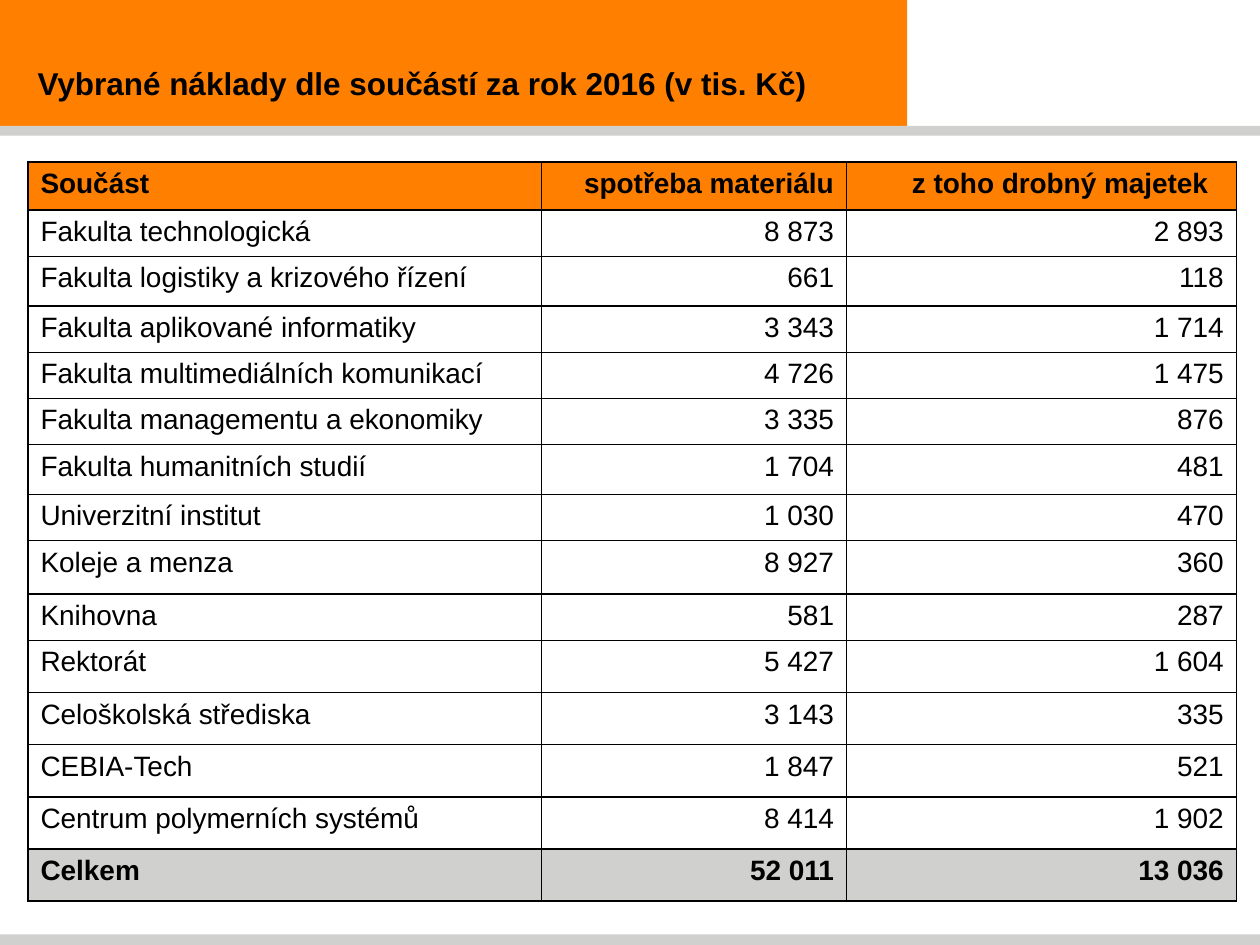
from typing import NamedTuple

from lxml.etree import SubElement as Sub
from pptx import Presentation
from pptx.dml.color import RGBColor as RGB
from pptx.enum.shapes import MSO_SHAPE as Shape
from pptx.enum.text import MSO_ANCHOR as Anchor, PP_ALIGN as Align
from pptx.oxml.ns import qn
from pptx.util import Pt

HUES = {"orange": "FF8001", "gray": "D0D0CE", "black": "000000"}
FACE = "Arial"


class Band(NamedTuple):
    left: float
    top: float
    width: float
    height: float
    hue: str


class Row(NamedTuple):
    name: str
    cost: str
    part: str
    height: float
    hue: str = ""


BANDS = [
    Band(0, 0, 518.4, 72, "orange"),
    Band(0, 534, 720, 6, "gray"),
    Band(0, 72, 720, 5.5, "gray"),
]
COLS = [293.5, 174.3, 222.7]
ROWS = [
    Row("Součást", "spotřeba materiálu", "z toho drobný majetek", 27.4, "orange"),
    Row("Fakulta technologická", "8 873", "2 893", 25),
    Row("Fakulta logistiky a krizového řízení", "661", "118", 28.4),
    Row("Fakulta aplikované informatiky", "3 343", "1 714", 25),
    Row("Fakulta multimediálních komunikací", "4 726", "1 475", 25),
    Row("Fakulta managementu a ekonomiky", "3 335", "876", 25),
    Row("Fakulta humanitních studií", "1 704", "481", 28.4),
    Row("Univerzitní institut", "1 030", "470", 26.3),
    Row("Koleje a menza", "8 927", "360", 30.6),
    Row("Knihovna", "581", "287", 25),
    Row("Rektorát", "5 427", "1 604", 29.8),
    Row("Celoškolská střediska", "3 143", "335", 29.8),
    Row("CEBIA-Tech", "1 847", "521", 29.8),
    Row("Centrum polymerních systémů", "8 414", "1 902", 29.8),
    Row("Celkem", "52 011", "13 036", 29.8, "gray"),
]


def tint(hue: str) -> RGB:
    return RGB.from_string(HUES[hue])


def style(para, size: float, bold: bool, left: float, first: float = 0) -> None:
    props = para._p.get_or_add_pPr()
    props.set("marL", str(Pt(left)))
    props.set("indent", str(Pt(first)))
    font = para.font
    font.name, font.size, font.bold = FACE, Pt(size), bold
    font.color.rgb = tint("black")


def draw_band(slide, band: Band) -> None:
    box = slide.shapes.add_shape(Shape.RECTANGLE, *map(Pt, band[:4]))
    box.shadow.inherit = False
    box.fill.solid()
    box.fill.fore_color.rgb = tint(band.hue)
    box.line.fill.background()


def draw_title(slide, text: str) -> None:
    box = slide.shapes.add_textbox(Pt(0), Pt(23), Pt(518.4), Pt(49))
    frame = box.text_frame
    frame.word_wrap = True
    frame.vertical_anchor = Anchor.MIDDLE
    para = frame.paragraphs[0]
    para.text = text
    style(para, 18, True, 14.4)


def add_rules(cell) -> None:
    props = cell._tc.get_or_add_tcPr()
    for side in ("lnL", "lnR", "lnT", "lnB"):
        line = Sub(props, qn(f"a:{side}"), w=str(Pt(1)))
        fill = Sub(line, qn("a:solidFill"))
        Sub(fill, qn("a:srgbClr"), val=HUES["black"])


def fill_cell(cell, text: str, hue: str, right: bool) -> None:
    add_rules(cell)
    if hue:
        cell.fill.solid()
        cell.fill.fore_color.rgb = tint(hue)
    else:
        cell.fill.background()
    para = cell.text_frame.paragraphs[0]
    para.text = text
    para.alignment = Align.RIGHT if right else Align.LEFT
    style(para, 16, bool(hue), 27.4, -27.4)


def draw_table(slide) -> None:
    high = sum(row.height for row in ROWS)
    frame = slide.shapes.add_table(
        len(ROWS), len(COLS), Pt(16), Pt(92.7), Pt(sum(COLS)), Pt(high)
    )
    table = frame.table
    table.first_row = table.horz_banding = False
    for col, width in zip(table.columns, COLS):
        col.width = Pt(width)
    for r, row in enumerate(ROWS):
        table.rows[r].height = Pt(row.height)
        for c, text in enumerate(row[:3]):
            fill_cell(table.cell(r, c), text, row.hue, c > 0)
    table.cell(0, 2).margin_right = Pt(16)


def main() -> None:
    deck = Presentation()
    deck.slide_width, deck.slide_height = Pt(720), Pt(540)
    slide = deck.slides.add_slide(deck.slide_layouts[6])
    for band in BANDS:
        draw_band(slide, band)
    draw_title(slide, "Vybrané náklady dle součástí za rok 2016 (v tis. Kč)")
    draw_table(slide)
    deck.save("out.pptx")


if __name__ == "__main__":
    main()
